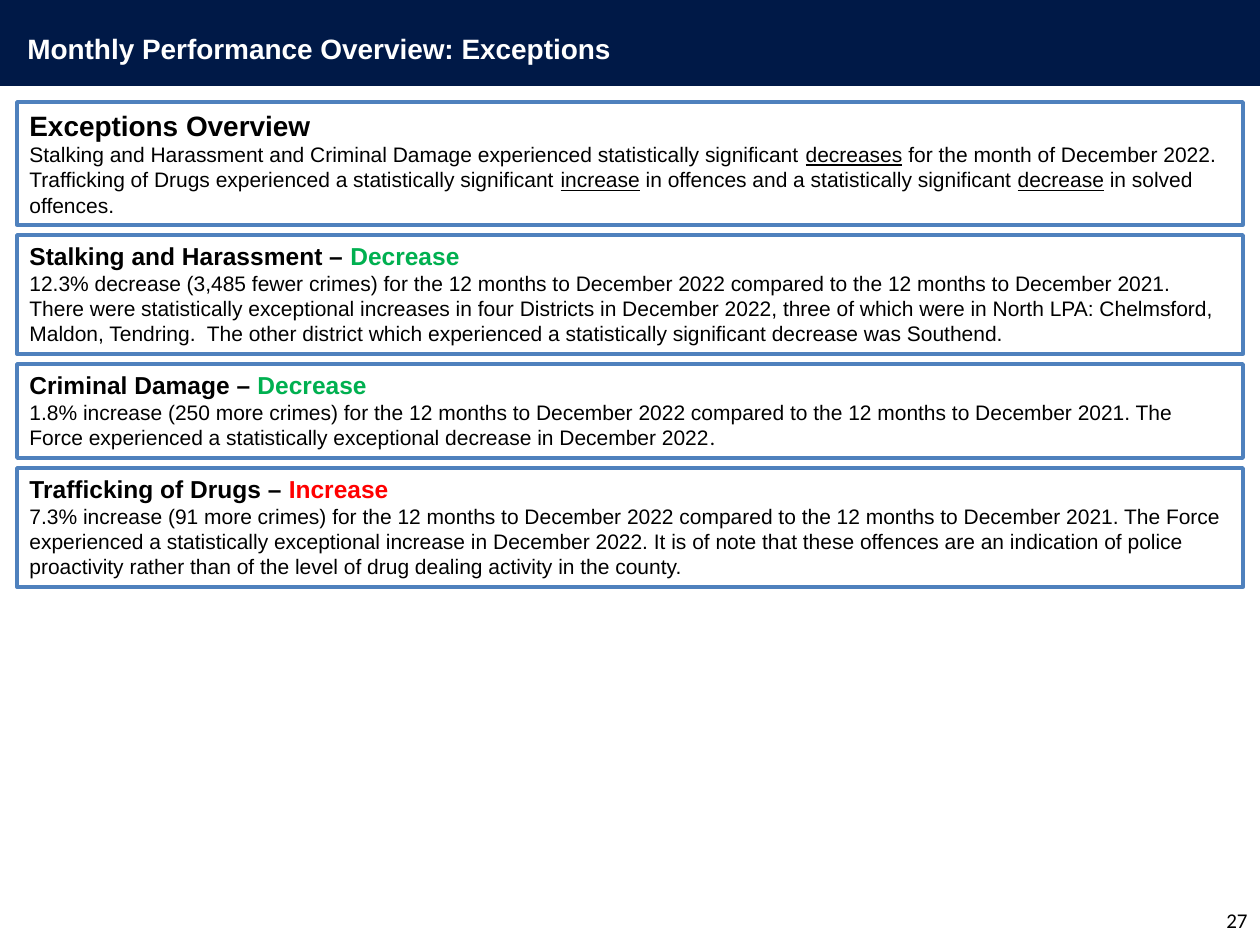
from dataclasses import dataclass

from pptx import Presentation
from pptx.dml.color import RGBColor
from pptx.enum.shapes import MSO_SHAPE
from pptx.enum.text import MSO_ANCHOR, MSO_AUTO_SIZE, PP_ALIGN
from pptx.util import Emu, Pt

RECTANGLE = MSO_SHAPE.RECTANGLE
MIDDLE, TOP = MSO_ANCHOR.MIDDLE, MSO_ANCHOR.TOP
GROW = MSO_AUTO_SIZE.SHAPE_TO_FIT_TEXT
LEFT, RIGHT = PP_ALIGN.LEFT, PP_ALIGN.RIGHT
EMU_PER_PX = 914400 / 126


@dataclass(frozen=True)
class Theme:
    navy: RGBColor = RGBColor(0x00, 0x19, 0x47)
    border: RGBColor = RGBColor(0x4F, 0x81, 0xBD)
    white: RGBColor = RGBColor(0xFF, 0xFF, 0xFF)
    black: RGBColor = RGBColor(0x00, 0x00, 0x00)
    green: RGBColor = RGBColor(0x00, 0xB0, 0x50)
    red: RGBColor = RGBColor(0xFF, 0x00, 0x00)
    font: str = "Arial"
    number_font: str = "Calibri"
    title: int = 16
    heading: int = 14
    body: int = 12
    border_width: int = 2


THEME = Theme()
TREND_COLORS = {"Decrease": THEME.green, "Increase": THEME.red}

# Each panel: height, heading size, heading, trend, body spans.
# A body span is its text and the font settings that differ.
UNDERLINED = {"underline": True}
PANELS = [
    (123, THEME.title, "Exceptions Overview", None, [
        ("Stalking and Harassment and Criminal Damage experienced "
         "statistically significant ", {}),
        ("decreases", UNDERLINED),
        (" for the month of December 2022. Trafficking of Drugs experienced "
         "a statistically significant ", {}),
        ("increase", UNDERLINED),
        (" in offences and a statistically significant ", {}),
        ("decrease", UNDERLINED),
        (" in solved offences.", {}),
    ]),
    (119, THEME.heading, "Stalking and Harassment – ", "Decrease", [
        ("12.3% decrease (3,485 fewer crimes) for the 12 months to December "
         "2022 compared to the 12 months to December 2021. There were "
         "statistically exceptional increases in four Districts in December "
         "2022, three of which were in North LPA: Chelmsford, Maldon, "
         "Tendring.  The other district which experienced a statistically "
         "significant decrease was Southend.", {}),
    ]),
    (94, THEME.heading, "Criminal Damage – ", "Decrease", [
        ("1.8% increase (250 more crimes) for the 12 months to December 2022 "
         "compared to the 12 months to December 2021. The Force experienced "
         "a statistically exceptional decrease in December 2022", {}),
        (".", {"name": THEME.number_font}),
    ]),
    (119, THEME.heading, "Trafficking of Drugs – ", "Increase", [
        ("7.3% increase (91 more crimes) for the 12 months to December 2022 "
         "compared to the 12 months to December 2021. The Force experienced "
         "a statistically exceptional increase in December 2022. It is of "
         "note that these offences are an indication of police proactivity "
         "rather than of the level of drug dealing activity in the county.",
         {}),
    ]),
]


def px(length):
    return Emu(round(length * EMU_PER_PX))


def add_rectangle(page, box, fill):
    shape = page.shapes.add_shape(RECTANGLE, *map(px, box))
    shape.shadow.inherit = False
    shape.fill.solid()
    shape.fill.fore_color.rgb = fill
    shape.line.fill.background()
    return shape


def style(para, size, color, bold=False, name=THEME.font, align=LEFT):
    para.alignment = align
    para.font.name = name
    para.font.size = Pt(size)
    para.font.bold = bold
    para.font.color.rgb = color


def add_span(para, text, settings):
    span = para.add_run()
    span.text = text
    for key, value in settings.items():
        setattr(span.font, key, value)
    return span


def add_label(page, box, text, **look):
    label = page.shapes.add_textbox(*map(px, box))
    label.text_frame.word_wrap = True
    para = label.text_frame.paragraphs[0]
    para.text = text
    style(para, **look)
    return label.text_frame


def add_header(page, box):
    left, top, width, height = box
    add_rectangle(page, box, THEME.navy)
    frame = add_label(page, (left + 15, top + 34, 714, 47),
                      "Monthly Performance Overview: Exceptions",
                      size=THEME.title, color=THEME.white, bold=True)
    frame.auto_size = GROW


def add_panel(page, box, heading_size, heading, trend, body):
    panel = add_rectangle(page, box, THEME.white)
    panel.line.color.rgb = THEME.border
    panel.line.width = Pt(THEME.border_width)
    frame = panel.text_frame
    frame.word_wrap = True
    frame.auto_size = GROW
    frame.vertical_anchor = TOP

    # Heading with its coloured trend
    para = frame.paragraphs[0]
    style(para, heading_size, THEME.black, bold=True)
    add_span(para, heading, {})
    if trend:
        add_span(para, trend, {}).font.color.rgb = TREND_COLORS[trend]

    # Body
    para = frame.add_paragraph()
    style(para, THEME.body, THEME.black)
    for text, settings in body:
        add_span(para, text, settings)


def add_panels(page, box, gap):
    left, top, width = box
    for height, *content in PANELS:
        add_panel(page, (left, top, width, height), *content)
        top += height + gap


def add_page_number(page, box, number):
    frame = add_label(page, box, number, size=THEME.body, color=THEME.black,
                      name=THEME.number_font, align=RIGHT)
    frame.vertical_anchor = MIDDLE


def main():
    deck = Presentation()
    deck.slide_width, deck.slide_height = px(1260), px(945)
    page = deck.slides.add_slide(deck.slide_layouts[6])
    add_header(page, (0, -9, 1260, 95))
    add_page_number(page, (966, 895, 294, 50), "27")
    add_panels(page, (17, 102, 1226), gap=10)
    deck.save("out.pptx")


if __name__ == "__main__":
    main()
